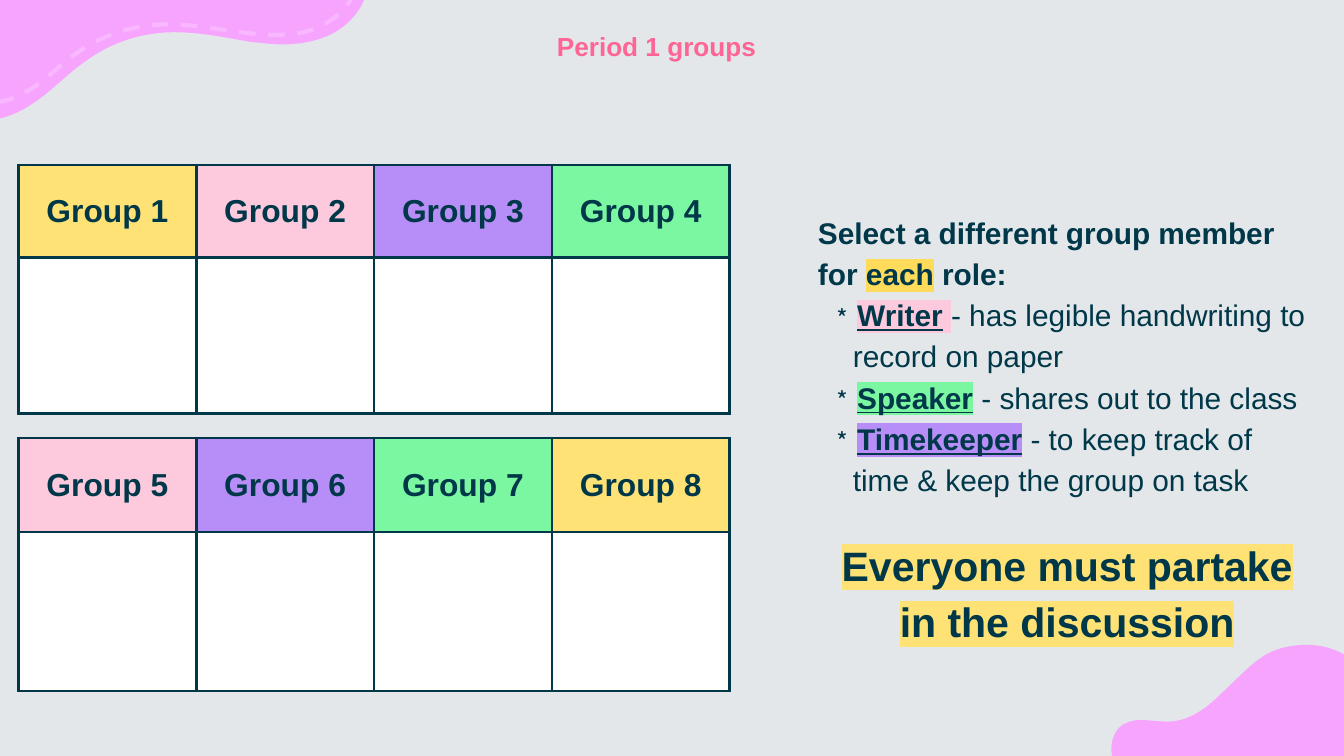
from lxml import etree
from pptx import Presentation
from pptx.dml.color import RGBColor
from pptx.enum.dml import MSO_LINE
from pptx.enum.text import MSO_ANCHOR, PP_ALIGN
from pptx.oxml.ns import qn
from pptx.util import Cm, Pt

CENTER, LEFT = PP_ALIGN.CENTER, PP_ALIGN.LEFT
TOP, MIDDLE = MSO_ANCHOR.TOP, MSO_ANCHOR.MIDDLE
DASH = MSO_LINE.DASH
INK, PINK, ROSE, PURPLE = "003849", "F7A4FF", "FCC9DD", "B78DF7"
GREEN, YELLOW, WHITE = "7CF7A1", "FEE275", "FFFFFF"

TOP_BLOB = [
    (0, 2.24), (0.25, 2.18), (0.48, 2.06), (0.69, 1.91),
    (1.02, 1.68), (1.27, 1.4), (1.6, 1.17), (2.08, 0.81), (2.67, 0.61), (3.3, 0.61),
    (3.78, 0.61), (4.27, 0.71), (4.72, 0.79), (4.93, 0.81), (5.13, 0.84), (5.33, 0.84),
    (5.64, 0.84), (5.92, 0.79), (6.17, 0.69), (6.48, 0.56), (6.76, 0.3), (6.88, 0)]
DASHED_EDGE = [
    (-0.05, 1.93), (0.18, 1.91), (0.43, 1.78), (0.64, 1.65),
    (0.94, 1.45), (1.19, 1.17), (1.5, 0.97), (1.98, 0.64), (2.57, 0.46), (3.18, 0.46),
    (3.66, 0.46), (4.11, 0.56), (4.57, 0.61), (4.78, 0.64), (4.98, 0.66), (5.16, 0.66),
    (5.44, 0.66), (5.72, 0.64), (5.99, 0.53), (6.27, 0.41), (6.55, 0.18), (6.68, -0.1)]
BOTTOM_BLOB = [
    (25.4, 12.37), (25.17, 12.24), (24.92, 12.19), (24.69, 12.19),
    (24.43, 12.19), (24.16, 12.24), (23.93, 12.37), (23.6, 12.57), (23.34, 12.88), (23.06, 13.13),
    (22.78, 13.41), (22.45, 13.64), (22.07, 13.64), (21.87, 13.64), (21.72, 13.61), (21.54, 13.61),
    (21.44, 13.61), (21.34, 13.64), (21.23, 13.69), (21.03, 13.82), (20.96, 14.1), (21.03, 14.35)]

ROLES = [
    ("Writer", " ", "- has legible handwriting to record on paper", ROSE),
    ("Speaker", "", " - shares out to the class", GREEN),
    ("Timekeeper", "", " - to keep track of time & keep the group on task", PURPLE)]


def rgb(value):
    """Turn a hex string into a colour."""
    return RGBColor.from_string(value)


def add_colour(parent, tag, value):
    """Append an element that holds one colour."""
    holder = etree.SubElement(parent, qn(tag))
    etree.SubElement(holder, qn("a:srgbClr"), val=value)


def bend_segments(shape, count):
    """Merge each three of the first straight segments into a cubic curve."""
    segments = list(shape._element.iter(qn("a:lnTo")))[:count]
    for first in range(0, count, 3):
        curve = etree.Element(qn("a:cubicBezTo"))
        segments[first].addprevious(curve)
        for segment in segments[first:first + 3]:
            curve.append(segment[0])
            segment.getparent().remove(segment)


def add_blob(page, edge, corner, fill=None, line=None):
    """Draw a curved outline that is closed through a corner."""
    start, *outline = [(Cm(x), Cm(y)) for x, y in edge + [corner]]
    builder = page.shapes.build_freeform(*start)
    builder.add_line_segments(outline, close=True)
    blob = builder.convert_to_shape()
    bend_segments(blob, len(edge) - 1)
    blob.shadow.inherit = False
    if fill:
        blob.fill.solid()
        blob.fill.fore_color.rgb = rgb(fill)
    else:
        blob.fill.background()
    if line:
        blob.line.color.rgb = rgb(line)
        blob.line.width = Pt(2.25)
        blob.line.dash_style = DASH
    else:
        blob.line.fill.background()


def style_para(para, size, bold=None, colour=INK, align=LEFT):
    """Set the font and alignment of a paragraph."""
    para.alignment = align
    para.font.name = "Arial"
    para.font.size = Pt(size)
    para.font.color.rgb = rgb(colour)
    para.font.bold = bold


def add_span(para, text, highlight=None, bold=None, underline=None):
    """Add a run with its own emphasis."""
    span = para.add_run()
    span.text = text
    span.font.bold = bold
    span.font.underline = underline
    if highlight:
        add_colour(span.font._element, "a:highlight", highlight)


def add_bullet(para):
    """Give a paragraph a hanging asterisk."""
    properties = para._p.get_or_add_pPr()
    properties.set("marL", str(Cm(0.66)))
    properties.set("indent", str(Cm(-0.48)))
    add_colour(properties, "a:buClr", INK)
    etree.SubElement(properties, qn("a:buFont"), typeface="Arial")
    etree.SubElement(properties, qn("a:buChar"), char="﹡")


def add_box(page, left, top, width, height, anchor):
    """Add a wrapping text box and return its text frame."""
    box = page.shapes.add_textbox(Cm(left), Cm(top), Cm(width), Cm(height))
    frame = box.text_frame
    frame.word_wrap = True
    frame.vertical_anchor = anchor
    return frame


def style_cell(cell, fill):
    """Set borders, margins and fill of a table cell."""
    properties = cell._tc.get_or_add_tcPr()
    for tag in ("a:lnL", "a:lnR", "a:lnT", "a:lnB"):
        border = etree.SubElement(properties, qn(tag), w=str(Pt(1.5)))
        add_colour(border, "a:solidFill", INK)
    cell.margin_left = cell.margin_right = Cm(0.25)
    cell.margin_top = cell.margin_bottom = Cm(0.25)
    cell.vertical_anchor = MIDDLE
    cell.fill.solid()
    cell.fill.fore_color.rgb = rgb(fill)


def add_groups(page, top, heights, first, colours):
    """Add a table of numbered groups with empty cells below."""
    table = page.shapes.add_table(
        2, len(colours), Cm(0.35), Cm(top),
        Cm(3.36 * len(colours)), Cm(sum(heights))).table
    for row, height in zip(table.rows, heights):
        row.height = Cm(height)
    for index, colour in enumerate(colours):
        table.columns[index].width = Cm(3.36)
        heading = table.cell(0, index)
        style_cell(heading, colour)
        style_cell(table.cell(1, index), WHITE)
        para = heading.text_frame.paragraphs[0]
        style_para(para, 17, True, align=CENTER)
        add_span(para, f"Group {first + index}")


def add_instructions(page):
    """Add the roles and the reminder beside the tables."""
    frame = add_box(page, 15.28, 3.12, 9.78, 9.93, MIDDLE)
    frame.margin_left = frame.margin_right = Cm(0.18)
    frame.margin_top = frame.margin_bottom = Cm(0.1)
    intro = frame.paragraphs[0]
    style_para(intro, 16, True)
    add_span(intro, "Select a different group member for ")
    add_span(intro, "each", "FFDB5C")
    add_span(intro, " role:")
    for role, gap, duty, colour in ROLES:
        para = frame.add_paragraph()
        add_bullet(para)
        style_para(para, 16)
        add_span(para, role, colour, True, True)
        if gap:
            add_span(para, gap, colour)
        add_span(para, duty)
    reminder = frame.add_paragraph()
    style_para(reminder, 22, True, align=CENTER)
    reminder.space_before = Pt(19)
    add_span(reminder, "Everyone must partake in the discussion", YELLOW)
    for para in frame.paragraphs:
        para.line_spacing = 1.15


def main():
    """Build the slide and save it."""
    deck = Presentation()
    deck.slide_width, deck.slide_height = Cm(25.4), Cm(14.29)
    page = deck.slides.add_slide(deck.slide_layouts[6])
    page.background.fill.solid()
    page.background.fill.fore_color.rgb = rgb("E3E7EA")
    add_blob(page, BOTTOM_BLOB, (25.4, 14.35), fill=PINK)
    add_blob(page, TOP_BLOB, (0, 0), fill=PINK)
    add_blob(page, DASHED_EDGE, (-0.05, -0.1), line="F9B7FF")
    add_groups(page, 3.12, (1.75, 2.95), 1, (YELLOW, ROSE, PURPLE, GREEN))
    title = add_box(page, 5.03, 0.45, 14.76, 2.29, TOP).paragraphs[0]
    style_para(title, 14, True, "FE6594", CENTER)
    add_span(title, "Period 1 groups")
    add_instructions(page)
    add_groups(page, 8.28, (1.78, 3), 5, (ROSE, PURPLE, GREEN, YELLOW))
    deck.save("out.pptx")


if __name__ == "__main__":
    main()
